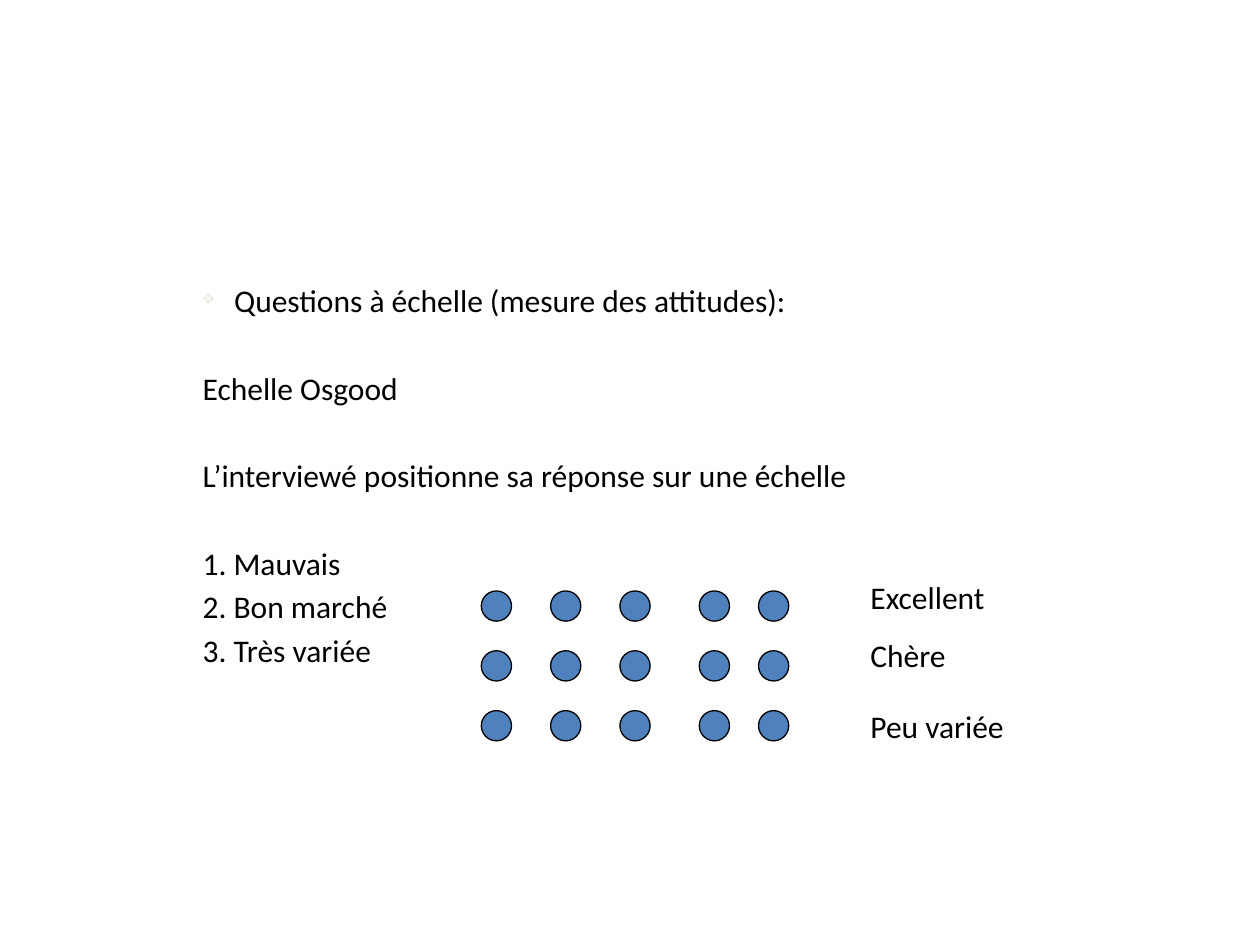
from typing import NamedTuple

from lxml import etree
from pptx import Presentation
from pptx.dml.color import RGBColor
from pptx.enum.shapes import MSO_SHAPE
from pptx.oxml.ns import qn
from pptx.util import Inches, Pt

OVAL = MSO_SHAPE.OVAL
FONT = "Calibri"
BLACK = "000000"
BLUE = "4F81BD"
BULLET_COLOUR = "EEECE1"

DOT_SIZE = 0.24
DOT_COLUMNS = (3.82, 4.37, 4.92, 5.55, 6.02)
DOT_TOP = 4.69
ROW_PITCH = 0.475
LABEL_LEFT = 6.81
LABEL_HEIGHT = 0.43
LINE_GAP = 3.25
BLANK_LINE_GAP = 28.5


class Line(NamedTuple):
    text: str
    space_before: float = LINE_GAP
    bullet: str = ""


class ScaleLabel(NamedTuple):
    text: str
    top: float
    width: float


QUESTION_LINES = (
    Line("Questions à échelle (mesure des attitudes):", 0, "❖"),
    Line("Echelle Osgood", BLANK_LINE_GAP),
    Line("L’interviewé positionne sa réponse sur une échelle", BLANK_LINE_GAP),
    Line("1. Mauvais", BLANK_LINE_GAP),
    Line("2. Bon marché"),
    Line("3. Très variée"),
)
SCALE_LABELS = (
    ScaleLabel("Excellent", 4.54, 1.33),
    ScaleLabel("Chère", 5, 0.96),
    ScaleLabel("Peu variée", 5.56, 1.53),
)


def colour(value: str) -> RGBColor:
    return RGBColor.from_string(value)


def set_bullet(properties, character: str) -> None:
    bullet_colour = etree.SubElement(properties, qn("a:buClr"))
    etree.SubElement(bullet_colour, qn("a:srgbClr"), val=BULLET_COLOUR)
    etree.SubElement(properties, qn("a:buSzPct"), val="65000")
    etree.SubElement(properties, qn("a:buChar"), char=character)


def add_text(slide, lines, *, left: float, top: float, width: float, height: float,
             margin: float = 0, indent: float = 0, size: float = 18,
             text_colour: str = BLACK) -> None:
    box = slide.shapes.add_textbox(Inches(left), Inches(top), Inches(width), Inches(height))
    frame = box.text_frame
    frame.word_wrap = True
    for index, line in enumerate(lines):
        paragraph = frame.paragraphs[0] if index == 0 else frame.add_paragraph()
        paragraph.space_before = Pt(line.space_before)
        properties = paragraph._p.get_or_add_pPr()
        properties.set("marL", str(Inches(margin)))
        properties.set("indent", str(Inches(indent)))
        if line.bullet:
            set_bullet(properties, line.bullet)
        run = paragraph.add_run()
        run.text = line.text
        run.font.name = FONT
        run.font.size = Pt(size)
        run.font.color.rgb = colour(text_colour)


def add_dot(slide, left: float, top: float) -> None:
    dot = slide.shapes.add_shape(OVAL, Inches(left), Inches(top),
                                 Inches(DOT_SIZE), Inches(DOT_SIZE))
    dot.shadow.inherit = False
    dot.fill.solid()
    dot.fill.fore_color.rgb = colour(BLUE)
    dot.line.color.rgb = colour(BLACK)
    dot.line.width = Pt(0.75)


def main() -> None:
    presentation = Presentation()
    presentation.slide_width = Inches(10)
    presentation.slide_height = Inches(7.5)
    slide = presentation.slides.add_slide(presentation.slide_layouts[6])

    add_text(slide, QUESTION_LINES, left=0.51, top=2.18, width=9, height=4.25,
             margin=1.25, indent=-0.25)
    for row, label in enumerate(SCALE_LABELS):
        for left in DOT_COLUMNS:
            add_dot(slide, left, DOT_TOP + row * ROW_PITCH)
        add_text(slide, [Line(label.text, 0)], left=LABEL_LEFT, top=label.top,
                 width=label.width, height=LABEL_HEIGHT)

    presentation.save("out.pptx")


if __name__ == "__main__":
    main()
